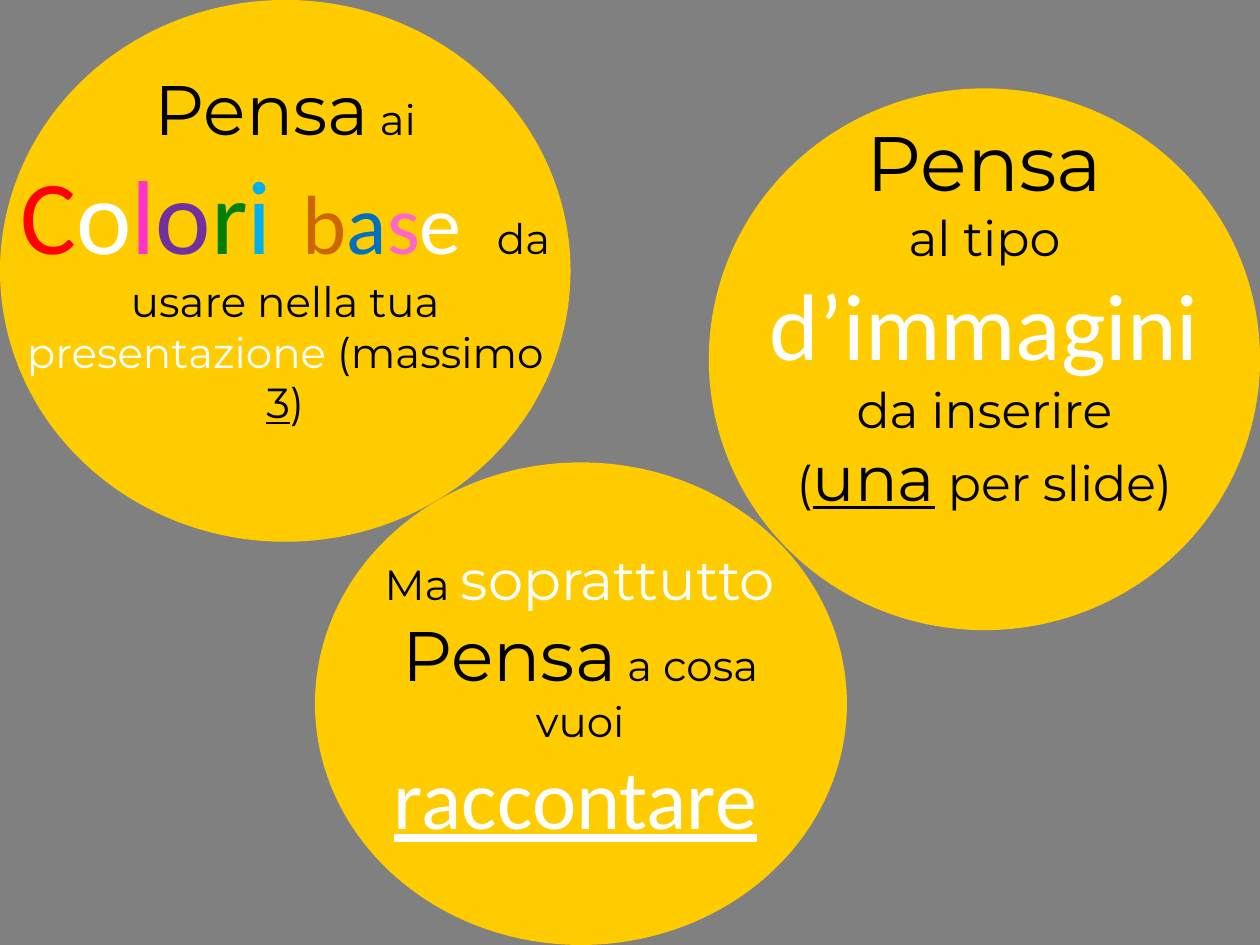
"""Build a slide with three yellow circles of advice on planning a presentation."""
from pptx import Presentation
from pptx.dml.color import RGBColor
from pptx.enum.shapes import MSO_SHAPE as Shape
from pptx.enum.text import MSO_AUTO_SIZE as AutoSize, PP_ALIGN as Align
from pptx.util import Pt

GREY = RGBColor(0x80, 0x80, 0x80)
YELLOW = RGBColor(0xFF, 0xCC, 0x00)
BLACK = RGBColor(0x00, 0x00, 0x00)
WHITE = RGBColor(0xFF, 0xFF, 0xFF)
RED = RGBColor(0xFF, 0x00, 0x00)
MAGENTA = RGBColor(0xFF, 0x33, 0xCC)
PURPLE = RGBColor(0x70, 0x30, 0xA0)
GREEN = RGBColor(0x00, 0x80, 0x00)
SKY = RGBColor(0x00, 0xB0, 0xF0)
ORANGE = RGBColor(0xCC, 0x66, 0x00)
BLUE = RGBColor(0x00, 0x70, 0xC0)
PINK = RGBColor(0xFF, 0x66, 0xCC)

WIDTH, HEIGHT = 720, 540
BODY, ACCENT = "Montserrat", "Calibri"


def plain(text, size=24, color=BLACK, underline=False):
    return text, size, BODY, color, underline, 0


def accent(text, size, color=WHITE, underline=False, spacing=0):
    return text, size, ACCENT, color, underline, spacing


COLORI = [accent(letter, 60, color)
          for letter, color in zip("Colori", (RED, WHITE, MAGENTA, PURPLE, GREEN, SKY))]
BASE = [accent(letter, 48, color)
        for letter, color in zip("base", (ORANGE, BLUE, PINK, WHITE))]

BUBBLES = [
    {"circle": (0, 0, 326, 309.6), "text": (-3, 34, 332, 216), "paragraphs": [
        [plain("Pensa", 40), plain(" ai")],
        [*COLORI, accent(" ", 60, spacing=4), *BASE, accent(" ", 18, spacing=16),
         plain("da usare nella tua "), plain("presentazione", color=WHITE),
         plain(" (massimo "), plain("3", underline=True), plain(")")],
    ]},
    {"circle": (405, 50.5, 315, 309.6), "text": (427.5, 62, 270, 237.6), "paragraphs": [
        [plain("Pensa", 44)],
        [plain("al tipo ", 28), accent("d’immagini", 54), accent(" ", 48, BLACK),
         plain("da inserire", 28)],
        [plain("(", 28), plain("una", 36, underline=True), plain(" per slide)", 28)],
    ]},
    {"circle": (180, 264.25, 304, 275.75), "text": (196.5, 307.5, 270, 181.5), "paragraphs": [
        [plain("Ma "), plain("soprattutto", 32, WHITE), plain(" "), plain("Pensa", 40),
         plain(" a cosa vuoi "), accent("raccontare", 48, underline=True), plain(" ", 20)],
    ]},
]


def add_filled(page, kind, place, color):
    shape = page.shapes.add_shape(kind, *map(Pt, place))
    shape.shadow.inherit = False
    shape.fill.solid()
    shape.fill.fore_color.rgb = color
    shape.line.fill.background()


def add_span(para, text, size, font, color, underline, spacing):
    span = para.add_run()
    span.text = text
    span.font.size = Pt(size)
    span.font.name = font
    span.font.color.rgb = color
    span.font.underline = underline
    if spacing:
        span.font._element.set("spc", str(spacing * 100))


def add_text(page, place, paragraphs):
    box = page.shapes.add_textbox(*map(Pt, place))
    frame = box.text_frame
    frame.word_wrap = True
    frame.auto_size = AutoSize.SHAPE_TO_FIT_TEXT
    for index, spans in enumerate(paragraphs):
        para = frame.add_paragraph() if index else frame.paragraphs[0]
        para.alignment = Align.CENTER
        for span in spans:
            add_span(para, *span)


def main():
    deck = Presentation()
    deck.slide_width, deck.slide_height = Pt(WIDTH), Pt(HEIGHT)
    page = deck.slides.add_slide(deck.slide_layouts[6])
    add_filled(page, Shape.RECTANGLE, (0, 0, WIDTH, HEIGHT), GREY)
    for bubble in BUBBLES:
        add_filled(page, Shape.OVAL, bubble["circle"], YELLOW)
    for bubble in BUBBLES:
        add_text(page, bubble["text"], bubble["paragraphs"])
    deck.save("out.pptx")


if __name__ == "__main__":
    main()
